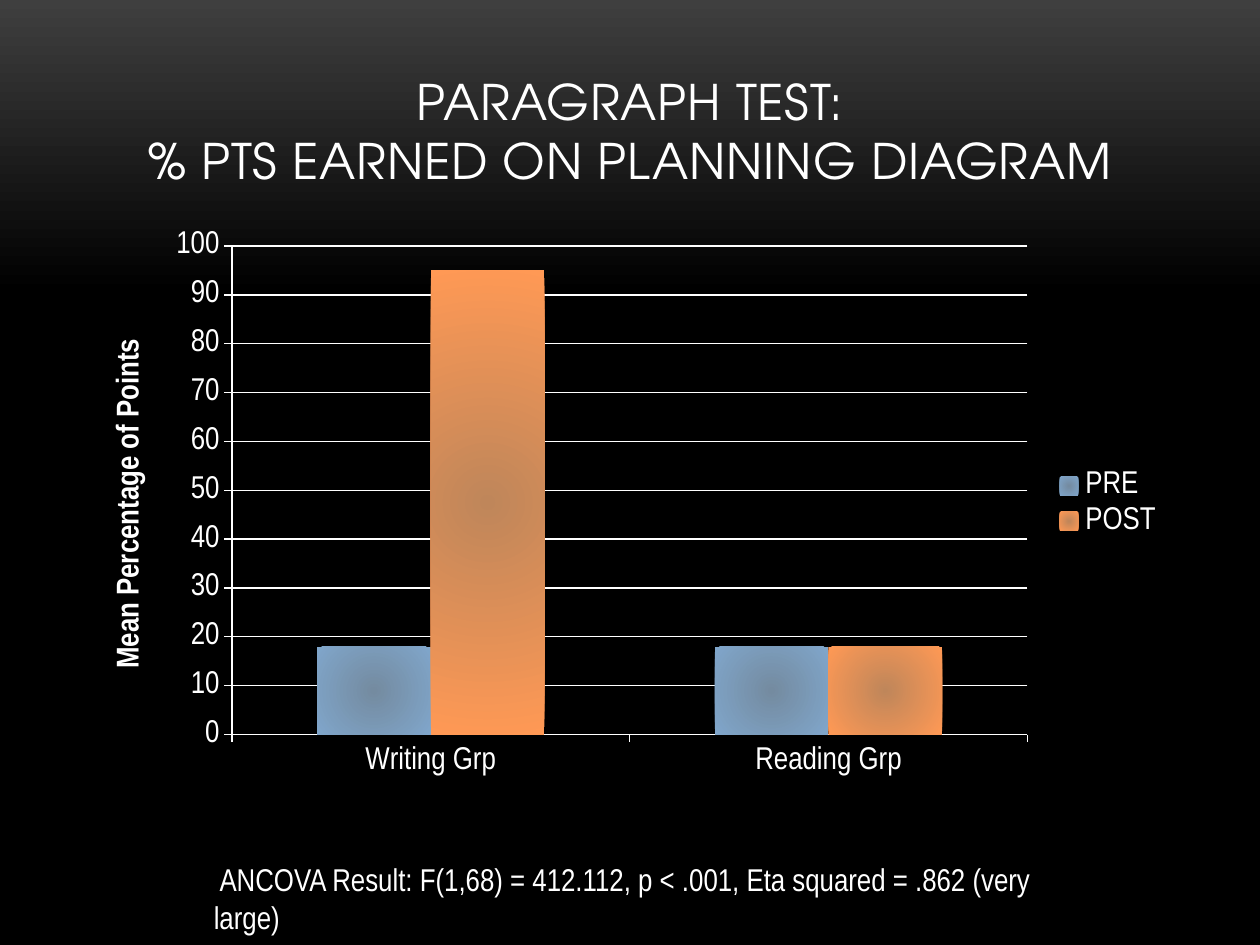
from dataclasses import dataclass
from lxml import etree
from pptx import Presentation
from pptx import util as u
from pptx.chart import data
from pptx.dml import color
from pptx.enum import chart as ch
from pptx.enum import text
from pptx.oxml import ns


@dataclass(frozen=True)
class Theme:
    ink: str = "FFFFFF"
    glow: str = "3F3F3F"
    base: str = "000000"
    blue: tuple = ("748BA0", "80A6CB")
    warm: tuple = ("BF865A", "FF9955")
    head: str = "TeX Gyre Adventor"
    body: str = "Arial Narrow"
    big: int = 28
    mid: int = 18


T = Theme()


def style(font, name, size, bold=False):
    font.name, font.size, font.bold = name, u.Pt(size), bold
    font.color.rgb = color.RGBColor.from_string(T.ink)


def blend(fill, tones, end=1):
    fill.gradient()
    for stop, tone, pos in zip(fill.gradient_stops, tones, (0, end)):
        stop.color.rgb = color.RGBColor.from_string(tone)
        stop.position = pos


# Slide and background
prs = Presentation()
prs.slide_width, prs.slide_height = u.Cm(25.4), u.Cm(19.05)
slide = prs.slides.add_slide(prs.slide_layouts[6])
back = slide.background.fill
blend(back, (T.glow, T.base), 0.31)
back.gradient_angle = 270

# Title
box = slide.shapes.add_textbox(u.Cm(1.7), u.Cm(0.76), u.Cm(22.02), u.Cm(3.18))
frame = box.text_frame
frame.word_wrap = True
frame.vertical_anchor = text.MSO_ANCHOR.BOTTOM
para = frame.paragraphs[0]
para.alignment = text.PP_ALIGN.CENTER
for i, line in enumerate(("PARAGRAPH TEST:", "% PTS EARNED ON PLANNING DIAGRAM")):
    if i:
        para.add_line_break()
    run = para.add_run()
    run.text = line
    style(run.font, T.head, T.big)
    run.font._element.set("spc", "50")

# Chart
pack = data.CategoryChartData()
pack.categories = ["Writing Grp", "Reading Grp"]
pack.add_series("PRE", (18, 18))
pack.add_series("POST", (95, 18))
chart = slide.shapes.add_chart(
    ch.XL_CHART_TYPE.COLUMN_CLUSTERED,
    u.Cm(1.7), u.Cm(4.44), u.Cm(22.02), u.Cm(11.43), pack).chart
style(chart.font, T.body, T.mid)
chart.has_title = False
chart.has_legend = True
chart.legend.position = ch.XL_LEGEND_POSITION.RIGHT
chart.legend.include_in_layout = False

# Bars, shaded from the centre outwards
plot = chart.plots[0]
plot.gap_width, plot.overlap = 150, 0
plot.vary_by_categories = False
for bar, tones in zip(plot.series, (T.blue, T.warm)):
    blend(bar.format.fill, tones)
    lin = bar._element.find(".//" + ns.qn("a:lin"))
    ring = etree.Element(ns.qn("a:path"))
    ring.set("path", "circle")
    rect = etree.SubElement(ring, ns.qn("a:fillToRect"))
    for side in "ltrb":
        rect.set(side, "50000")
    lin.getparent().replace(lin, ring)

# Axes and grid
vert, horz = chart.value_axis, chart.category_axis
vert.minimum_scale, vert.maximum_scale, vert.major_unit = 0, 100, 10
vert.has_major_gridlines = True
for part in (vert, horz, vert.major_gridlines):
    part.format.line.color.rgb = color.RGBColor.from_string(T.ink)
    part.format.line.width = u.Pt(0.75)
for axis in (vert, horz):
    axis.major_tick_mark = ch.XL_TICK_MARK.OUTSIDE
    axis.minor_tick_mark = ch.XL_TICK_MARK.NONE
run = vert.axis_title.text_frame.paragraphs[0].add_run()
run.text = "Mean Percentage of Points"
style(run.font, T.body, T.mid, True)

# Test result
box = slide.shapes.add_textbox(u.Cm(4.06), u.Cm(17.22), u.Cm(17.8), u.Cm(1.8))
frame = box.text_frame
frame.word_wrap = True
run = frame.paragraphs[0].add_run()
run.text = " ANCOVA Result: F(1,68) = 412.112, p < .001, Eta squared = .862 (very large)"
style(run.font, T.body, T.mid)

prs.save("out.pptx")
